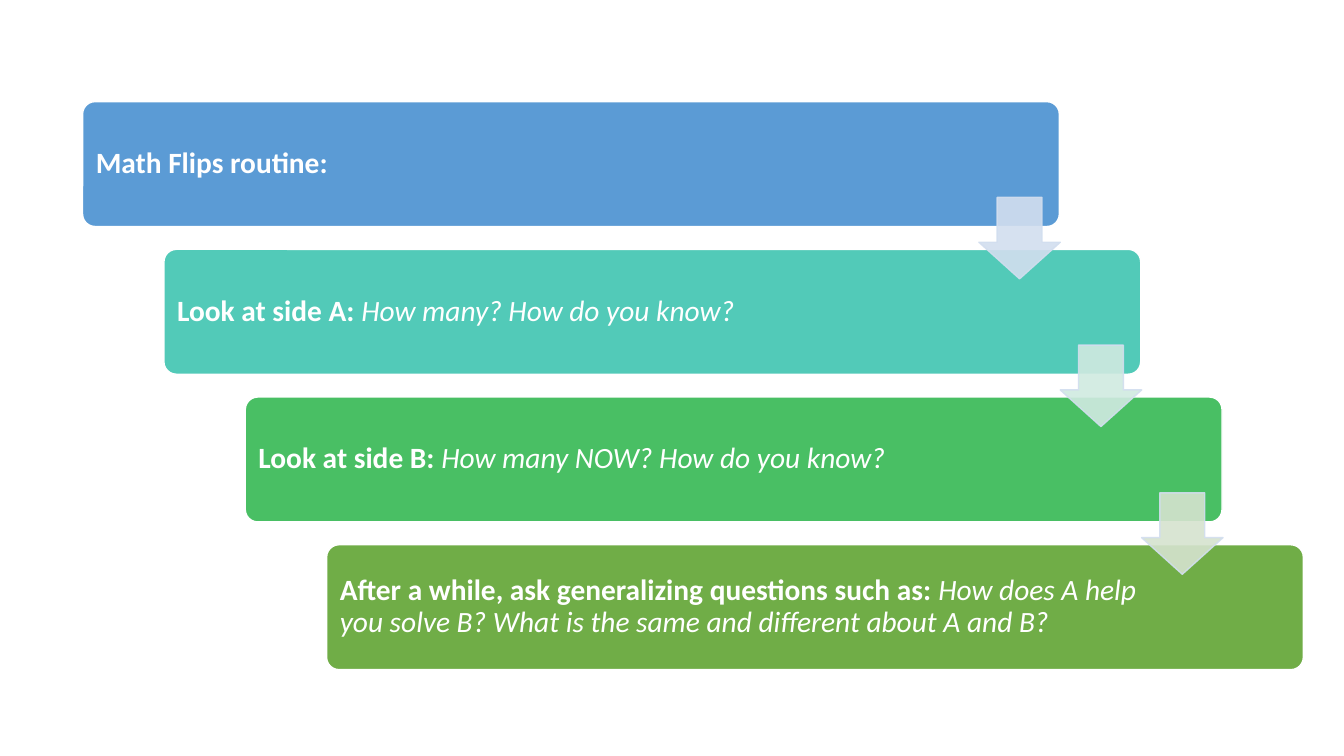
from lxml import etree
from pptx import Presentation
from pptx.dml.color import RGBColor
from pptx.enum import shapes, text
from pptx.oxml.ns import qn
from pptx.util import Pt

HUES = {
    "white": "FFFFFF", "blue": "5B9BD5", "teal": "52CAB8",
    "green": "49BF64", "olive": "70AD47",
    "edge": "D2DEEF", "ice": "D2DEEF", "mint": "D0EAE1", "sage": "D5E3CF",
}


class Deck:
    font, size = "Calibri", 21

    def __init__(self):
        self.prs = Presentation()
        self.prs.slide_width, self.prs.slide_height = Pt(960), Pt(540)
        self.slide = self.prs.slides.add_slide(self.prs.slide_layouts[6])

    def paint(self, fill, hue, alpha=100):
        fill.solid()
        fill.fore_color.rgb = RGBColor.from_string(HUES[hue])
        if alpha < 100:
            for tint in fill._xPr.iter(qn("a:srgbClr")):
                if tint.find(qn("a:alpha")) is None:
                    etree.SubElement(tint, qn("a:alpha"), val=str(alpha * 1000))

    def shape(self, kind, box, adj, fill, line, alpha=100):
        item = self.slide.shapes.add_shape(kind, *map(Pt, box))
        item.shadow.inherit = False
        for i, value in enumerate(adj):
            item.adjustments[i] = value
        self.paint(item.fill, fill, alpha)
        self.paint(item.line.fill, line, alpha)
        item.line.width = Pt(1)
        return item

    def bar(self, box, hue, head, ask):
        item = self.shape(shapes.MSO_SHAPE.ROUNDED_RECTANGLE, box, [0.1],
                          hue, "white")
        frame = item.text_frame
        frame.word_wrap = True
        frame.vertical_anchor = text.MSO_ANCHOR.MIDDLE
        # The wide right margin keeps the words clear of the arrows
        frame.margin_left, frame.margin_right = Pt(6.8), Pt(104.7)
        frame.margin_top = frame.margin_bottom = Pt(6.5)
        para = frame.paragraphs[0]
        para.alignment = text.PP_ALIGN.LEFT
        para.line_spacing = 0.9
        self.run(para, head, bold=True)
        if ask:
            self.run(para, ask, italic=True)

    def run(self, para, words, bold=False, italic=False):
        run = para.add_run()
        run.text = words
        font = run.font
        font.name, font.size = self.font, Pt(self.size)
        font.bold, font.italic = bold, italic
        font.color.rgb = RGBColor.from_string(HUES["white"])

    def arrow(self, box, hue):
        self.shape(shapes.MSO_SHAPE.DOWN_ARROW, box, [0.55, 0.45],
                   hue, "edge", alpha=90)


STEPS = [
    ("blue", "Math Flips routine:", ""),
    ("teal", "Look at side A: ", "How many? How do you know?"),
    ("green", "Look at side B: ", "How many NOW? How do you know?"),
    ("olive", "After a while, ask generalizing questions such as: ",
     "How does A help you solve B? "
     "What is the same and different about A and B?"),
]
DX, DY = 58.1, 105.5


def main():
    deck = Deck()
    # Staircase of steps
    for i, (hue, head, ask) in enumerate(STEPS):
        deck.bar((59 + i * DX, 72.6 + i * DY, 697.7, 89.2), hue, head, ask)
    # Arrows from each step to the next
    for i, hue in enumerate(["ice", "mint", "sage"]):
        deck.arrow((699.2 + i * DX, 141 + i * DY, 58.2, 58.2), hue)
    deck.prs.save("out.pptx")


if __name__ == "__main__":
    main()
